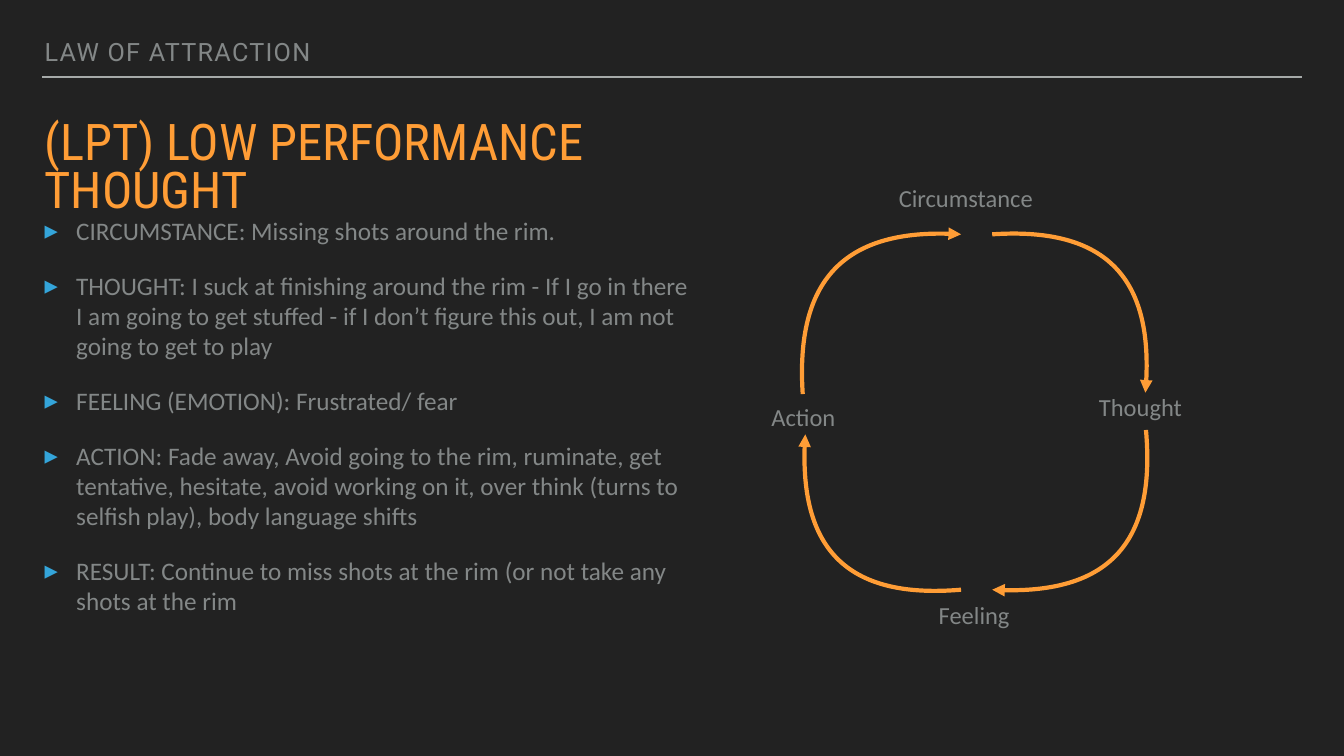
from lxml.etree import SubElement
from pptx import Presentation
from pptx.dml.color import RGBColor
from pptx.enum.shapes import MSO_CONNECTOR
from pptx.enum.text import MSO_ANCHOR, MSO_AUTO_SIZE, PP_ALIGN
from pptx.oxml.ns import qn
from pptx.util import Cm, Pt

COLORS = {
    "back": "222222",
    "rule": "A6AAA9",
    "text": "838787",
    "accent": "FF9D36",
    "bullet": "34A5DA",
}


def color(name):
    return RGBColor.from_string(COLORS[name])


def write(shape, box, lines, font, size, ink, before=0, spacing=1.0,
          anchor=MSO_ANCHOR.TOP, fit=MSO_AUTO_SIZE.NONE, wrap=True):
    """Place a shape and fill it with evenly styled, left-aligned paragraphs."""
    shape.left, shape.top, shape.width, shape.height = map(Cm, box)
    frame = shape.text_frame
    frame.text = "\n".join(lines)
    frame.word_wrap = wrap
    frame.auto_size = fit
    frame.vertical_anchor = anchor
    frame.margin_left = frame.margin_right = Cm(0.14)
    frame.margin_top = frame.margin_bottom = Cm(0.14)
    for par in frame.paragraphs:
        par.alignment = PP_ALIGN.LEFT
        par.line_spacing = spacing
        par.space_before = Pt(before)
        par.font.name = font
        par.font.size = Pt(size)
        par.font.color.rgb = color(ink)
    return frame.paragraphs


deck = Presentation()
deck.slide_width, deck.slide_height = Cm(67.74), Cm(38.1)
slide = deck.slides.add_slide(deck.slide_layouts[3])
slide.background.fill.solid()
slide.background.fill.fore_color.rgb = color("back")
title, header, body = slide.placeholders

# Header and its rule
rule = slide.shapes.add_connector(
    MSO_CONNECTOR.STRAIGHT, Cm(2.12), Cm(3.89), Cm(65.62), Cm(3.89))
rule.line.color.rgb = color("rule")
rule.line.width = Pt(2)
SubElement(rule._element.spPr, qn("a:effectLst"))

head = write(header, (2.11, 1.75, 58.22, 1.75), ["LAW OF ATTRACTION"],
             "Roboto", 36, "text", spacing=0.8, anchor=MSO_ANCHOR.BOTTOM,
             fit=MSO_AUTO_SIZE.SHAPE_TO_FIT_TEXT)[0]
props = head._p.get_or_add_pPr()
props.set("marL", "0")
props.set("indent", "0")
SubElement(props, qn("a:buNone"))
head.runs[0]._r.get_or_add_rPr().set("spc", "180")

# Title and list
write(title, (2.11, 5.99, 32.82, 2.82), ["(LPT) LOW PERFORMANCE THOUGHT"],
      "Roboto Condensed", 72.2, "accent", before=32, spacing=0.8)

points = [
    "CIRCUMSTANCE: Missing shots around the rim.",
    "THOUGHT: I suck at finishing around the rim - If I go in there I am "
    "going to get stuffed - if I don’t figure this out, I am not going to "
    "get to play",
    "FEELING (EMOTION): Frustrated/ fear",
    "ACTION: Fade away, Avoid going to the rim, ruminate, get tentative, "
    "hesitate, avoid working on it, over think (turns to selfish play), "
    "body language shifts",
    "RESULT: Continue to miss shots at the rim (or not take any shots at "
    "the rim",
]
for par in write(body, (2.11, 10.72, 32.82, 23.85), points,
                 "Calibri", 36, "text", before=35):
    props = par._p.get_or_add_pPr()
    props.set("marL", str(Cm(1.59)))
    props.set("indent", str(-Cm(1.59)))
    tint = SubElement(props, qn("a:buClr"))
    SubElement(tint, qn("a:srgbClr"), val=COLORS["bullet"])
    SubElement(props, qn("a:buSzPct"), val="105000")
    SubElement(props, qn("a:buFont"), typeface="Calibri")
    SubElement(props, qn("a:buChar"), char="▸")

# Cycle: each arc has a start, two control points and an end, clockwise
cycle = slide.shapes.add_group_shape()
arcs = [
    [(40.46, 19.86), (40.08, 14.1), (42.75, 11.43), (48.44, 11.81)],
    [(50.01, 11.81), (55.65, 11.43), (58.24, 14.1), (57.73, 19.79)],
    [(57.76, 21.67), (58.27, 27.38), (55.68, 30.05), (50.01, 29.72)],
    [(48.44, 29.72), (42.8, 30.2), (40.18, 27.58), (40.59, 21.89)],
]
for arc in arcs:
    start, *curve = [(Cm(x), Cm(y)) for x, y in arc]
    pen = cycle.shapes.build_freeform(*start)
    pen.add_line_segments(curve[-1:], close=False)
    shape = pen.convert_to_shape()
    shape.shadow.inherit = False
    shape.fill.background()
    shape.line.color.rgb = color("accent")
    shape.line.width = Pt(6)
    SubElement(shape.line._ln, qn("a:tailEnd"), type="triangle")
    # Turn the straight segment into a Bézier curve
    segment = shape._element.xpath(".//a:lnTo")[0]
    outline = segment.getparent()
    outline.remove(segment)
    bend = SubElement(outline, qn("a:cubicBezTo"))
    for x, y in curve:
        SubElement(bend, qn("a:pt"),
                   x=str(x - shape.left), y=str(y - shape.top))

labels = [
    ("Circumstance", 45.16, 8.99, 8.33),
    ("Thought", 55.25, 19.53, 5.41),
    ("Feeling", 47.17, 30, 4.83),
    ("Action", 38.74, 19.99, 4.01),
]
for label, left, top, width in labels:
    box = cycle.shapes.add_textbox(0, 0, 0, 0)
    write(box, (left, top, width, 1.98), [label], "Calibri", 35, "text",
          before=39, anchor=MSO_ANCHOR.MIDDLE,
          fit=MSO_AUTO_SIZE.SHAPE_TO_FIT_TEXT, wrap=False)

# Fit the group's frame to its parts, which were placed after being added
parts = list(cycle.shapes)
left, top = min(p.left for p in parts), min(p.top for p in parts)
right = max(p.left + p.width for p in parts)
bottom = max(p.top + p.height for p in parts)
frame = cycle._element.grpSpPr.get_or_add_xfrm()
for tag, (a, b) in {"off": (left, top), "chOff": (left, top)}.items():
    node = frame.find(qn("a:" + tag))
    node.set("x", str(a))
    node.set("y", str(b))
for tag in ("ext", "chExt"):
    node = frame.find(qn("a:" + tag))
    node.set("cx", str(right - left))
    node.set("cy", str(bottom - top))

deck.save("out.pptx")
